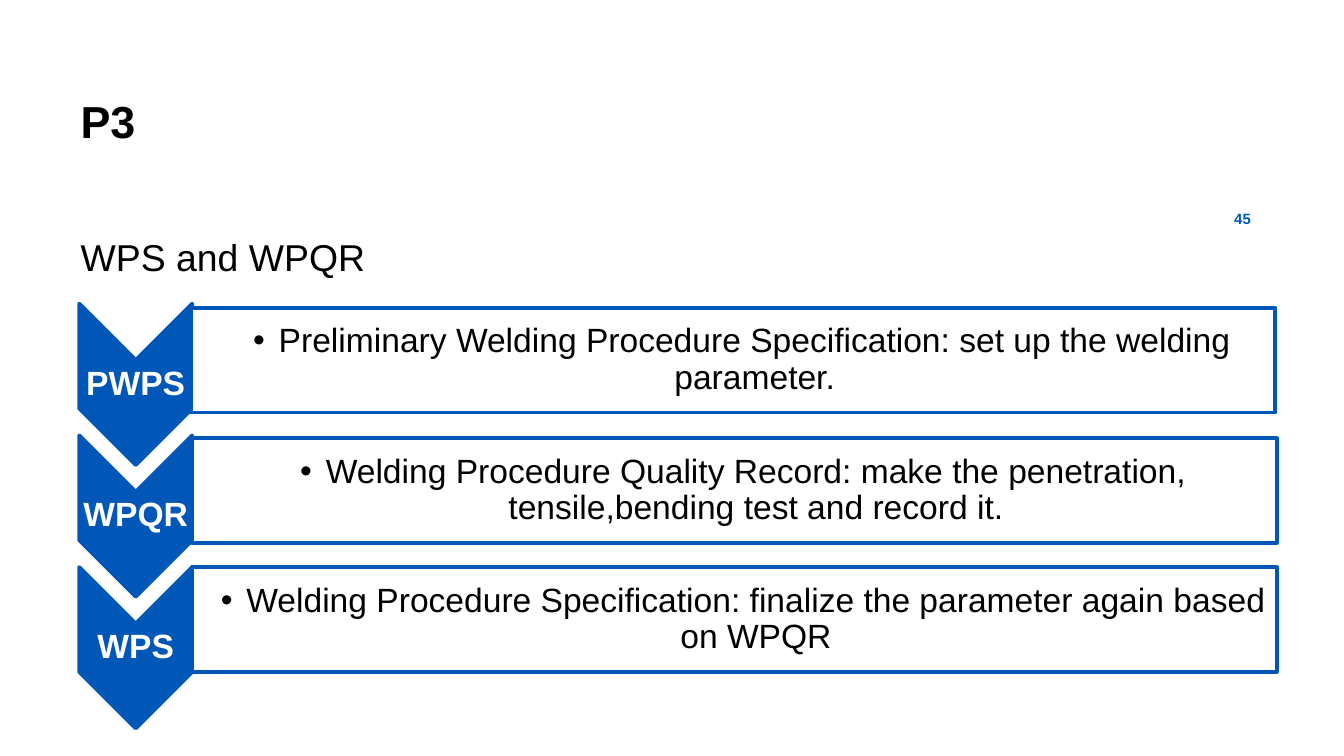
import pptx
import pptx.util
import pptx.dml.color
import pptx.enum.shapes
import pptx.enum.text
import pptx.oxml.ns
import lxml.etree

Inches = pptx.util.Inches
Pt = pptx.util.Pt
ALIGN = pptx.enum.text.PP_ALIGN
SHAPES = pptx.enum.shapes.MSO_SHAPE
BLUE, BLACK, WHITE = "0057B8", "000000", "FFFFFF"


def color(value):
    return pptx.dml.color.RGBColor.from_string(value)


def write(shape, text, size, font_color, bold=False, align=ALIGN.CENTER,
          anchor=pptx.enum.text.MSO_ANCHOR.MIDDLE, margins=(0.1, 0.05, 0.1, 0.05), bullet=False):
    frame = shape.text_frame
    frame.word_wrap = True
    frame.auto_size = pptx.enum.text.MSO_AUTO_SIZE.NONE
    frame.vertical_anchor = anchor
    frame.margin_left, frame.margin_top, frame.margin_right, frame.margin_bottom = map(Inches, margins)
    frame.text = text
    paragraph = frame.paragraphs[0]
    properties = paragraph._p.get_or_add_pPr()
    properties.set("marL", str(Inches(0.19) if bullet else 0))
    properties.set("indent", str(Inches(-0.19) if bullet else 0))
    if bullet:
        lxml.etree.SubElement(properties, pptx.oxml.ns.qn("a:buFont")).set("typeface", "Arial")
        lxml.etree.SubElement(properties, pptx.oxml.ns.qn("a:buChar")).set("char", "•")
    else:
        lxml.etree.SubElement(properties, pptx.oxml.ns.qn("a:buNone"))
    paragraph.alignment = align
    paragraph.space_before = Pt(0)
    font = paragraph.runs[0].font
    font.name, font.size, font.bold = "Arial", Pt(size), bold
    font.color.rgb = color(font_color)
    return paragraph


presentation = pptx.Presentation()
presentation.slide_width = Inches(10)
presentation.slide_height = Inches(10) * 9 // 16
slide = presentation.slides.add_slide(presentation.slide_layouts[1])
shapes = slide.shapes

title, body = slide.placeholders
title.left, title.top, title.width, title.height = map(Inches, (0.5, 0.51, 8.35, 0.78))
write(title, "P3", 24, BLACK, bold=True, align=ALIGN.LEFT)
body.left, body.top, body.width, body.height = map(Inches, (0.5, 1.69, 9, 3.34))
write(body, "WPS and WPQR", 20, BLACK, align=ALIGN.LEFT, anchor=pptx.enum.text.MSO_ANCHOR.TOP)

steps = [
    ("PWPS", 1.42, 2.29, "Preliminary Welding Procedure Specification: set up the welding parameter."),
    ("WPQR", 1.43, 3.26, "Welding Procedure Quality Record: make the penetration, tensile,bending test and record it."),
    ("WPS", 1.43, 4.22, "Welding Procedure Specification: finalize the parameter again based on WPQR"),
]
for index, (name, left, top, description) in enumerate(steps):
    chevron_top = 2.44 + 0.98 * index
    chevron = shapes.add_shape(SHAPES.CHEVRON, Inches(0.41), Inches(chevron_top), Inches(1.2), Inches(0.84))
    chevron.rotation = 90
    box = shapes.add_shape(SHAPES.RECTANGLE, Inches(left), Inches(top), Inches(8.07), Inches(0.78))
    for shape, fill in ((chevron, BLUE), (box, WHITE)):
        shape.shadow.inherit = False
        shape.fill.solid()
        shape.fill.fore_color.rgb = color(fill)
        shape.line.color.rgb = color(BLUE)
        shape.line.width = Pt(2)
    label = shapes.add_textbox(Inches(0.59), Inches(chevron_top + 0.24), Inches(0.84), Inches(0.36))
    write(label, name, 18, WHITE, bold=True, margins=(0.01,) * 4).line_spacing = 0.9
    write(box, description, 18, BLACK, margins=(0.14, 0.01, 0.01, 0.01), bullet=True).line_spacing = 0.9

page_number = shapes.add_textbox(Inches(8.99), Inches(1.56), Inches(0.51), Inches(0.13))
write(page_number, "45", 8, BLUE, bold=True, margins=(0, 0, 0, 0))

presentation.save("out.pptx")
